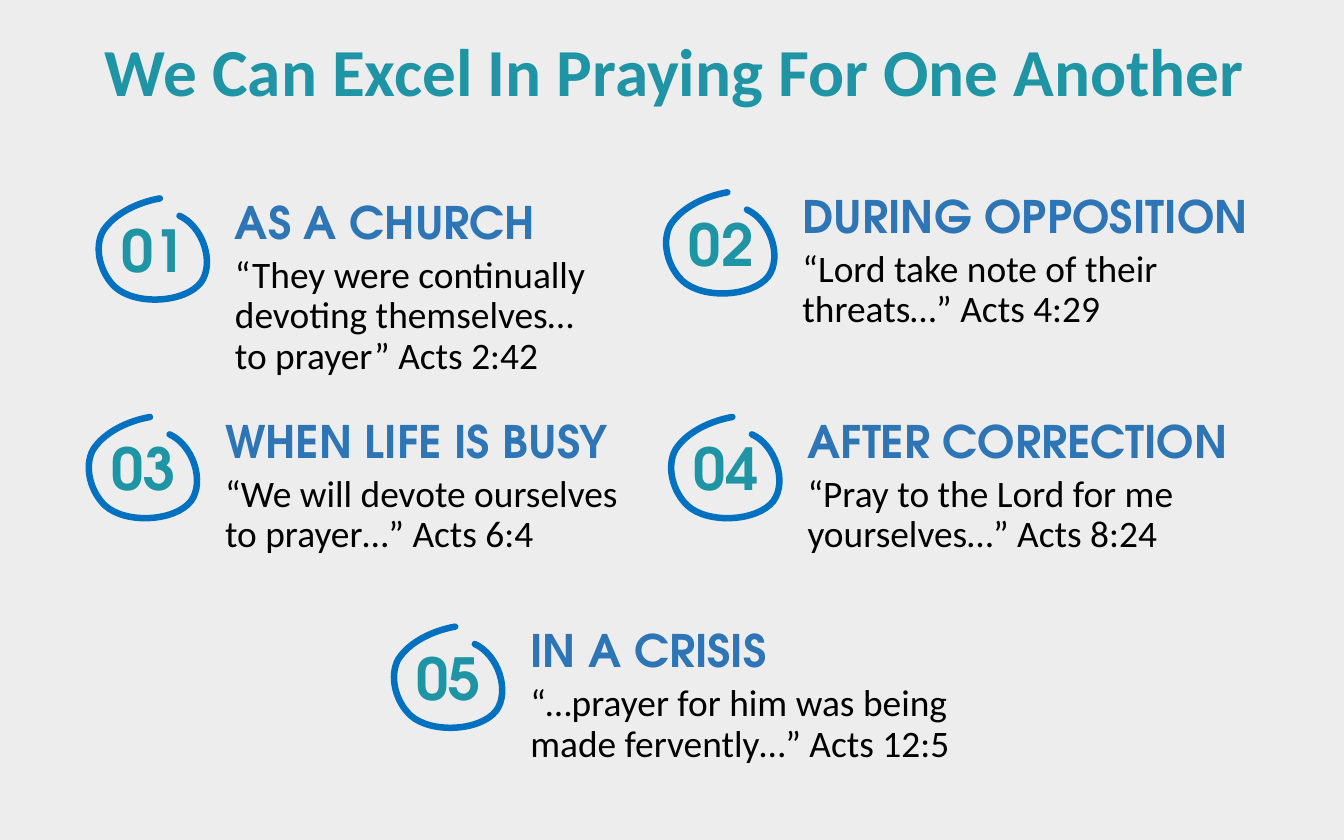
from dataclasses import dataclass

from lxml.etree import SubElement
from pptx import Presentation
from pptx.dml.color import RGBColor as RGB
from pptx.enum.text import MSO_ANCHOR as Anchor, PP_ALIGN as Align
from pptx.oxml.ns import qn
from pptx.util import Pt


@dataclass(frozen=True)
class Theme:
    background: RGB = RGB(0xED, 0xED, 0xED)
    teal: RGB = RGB(0x1E, 0x94, 0xA5)
    heading: RGB = RGB(0x2E, 0x75, 0xB6)
    ring: RGB = RGB(0x00, 0x70, 0xC0)
    body: RGB = RGB(0, 0, 0)
    text_font: str = "Calibri"
    display_font: str = "TeX Gyre Adventor"
    title_size: int = 36
    number_size: int = 31
    heading_size: int = 24
    body_size: int = 20
    ring_width: float = 3.5


THEME = Theme()

# left, top, heading width, verse width, heading, verse
REASONS = [
    (51, 106.3, 181, 202, "AS A CHURCH",
     "“They were continually devoting themselves… to prayer” Acts 2:42"),
    (355, 103, 277, 217, "DURING OPPOSITION",
     "“Lord take note of their threats…” Acts 4:29"),
    (45.7, 223.4, 235, 235, "WHEN LIFE IS BUSY",
     "“We will devote ourselves to prayer…” Acts 6:4"),
    (357.7, 223.4, 277, 217, "AFTER CORRECTION",
     "“Pray to the Lord for me yourselves…” Acts 8:24"),
    (209.2, 335.7, 277, 240, "IN A CRISIS",
     "“…prayer for him was being made fervently…” Acts 12:5"),
]

# Hand-drawn ring: its size, its start, then the three points of each cubic curve
RING_SIZE = (58, 54)
RING_START = (32.5, 0)
RING_CURVES = [
    [(21, 2), (8, 8), (2, 17.5)],
    [(-3, 26.5), (0.5, 40), (8.5, 47.5)],
    [(19.5, 57.5), (46, 56), (54.5, 45)],
    [(62, 34.5), (55.5, 15), (43, 9.3)],
]


def format_paragraph(p, font, size, color, bold=True, align=Align.LEFT, spacing=1.0):
    p.alignment, p.line_spacing = align, spacing
    p.font.name, p.font.size, p.font.bold = font, Pt(size), bold
    p.font.color.rgb = color


def add_text(shapes, text, box, inset, anchor, **style):
    tf = shapes.add_textbox(*map(Pt, box)).text_frame
    tf.word_wrap = True
    tf.vertical_anchor = anchor
    tf.margin_top = tf.margin_bottom = Pt(inset)
    tf.text = text
    format_paragraph(tf.paragraphs[0], **style)


def add_segment(outline, kind, points):
    segment = SubElement(outline, qn(kind))
    for x, y in points:
        SubElement(segment, qn("a:pt"), x=str(Pt(x)), y=str(Pt(y)))


def add_ring(shapes, left, top):
    """Span the ring's box with a freeform, then give it curved segments."""
    width, height = RING_SIZE
    builder = shapes.build_freeform(Pt(left), Pt(top))
    builder.add_line_segments([(Pt(left + width), Pt(top + height))], close=False)
    ring = builder.convert_to_shape()
    outline = next(ring._element.iter(qn("a:path")))
    for segment in list(outline):
        outline.remove(segment)
    add_segment(outline, "a:moveTo", [RING_START])
    for curve in RING_CURVES:
        add_segment(outline, "a:cubicBezTo", curve)

    ring.shadow.inherit = False
    ring.fill.background()
    ring.line.color.rgb = THEME.ring
    ring.line.width = Pt(THEME.ring_width)
    ln = next(ring._element.iter(qn("a:ln")))
    ln.set("cap", "rnd")
    SubElement(ln, qn("a:round"))


def add_reason(s, number, left, top, heading_width, verse_width, heading, verse):
    shapes = s.shapes.add_group_shape().shapes
    text_left = left + 67.8
    add_text(shapes, heading, (text_left, top - 5.5, heading_width, 36), 3.6, Anchor.TOP,
             font=THEME.display_font, size=THEME.heading_size, color=THEME.heading)
    add_text(shapes, f"{number:02}", (left, top + 15.2, 62.6, 24), 7.2, Anchor.MIDDLE,
             font=THEME.display_font, size=THEME.number_size, color=THEME.teal,
             align=Align.CENTER)
    add_ring(shapes, left + 2.2, top)
    add_text(shapes, verse, (text_left, top + 27, verse_width, 72.7), 4, Anchor.TOP,
             font=THEME.text_font, size=THEME.body_size, color=THEME.body,
             bold=False, spacing=0.9)


def add_title(s, text):
    title = s.shapes.title
    title.left, title.top, title.width, title.height = map(Pt, (28, 7.2, 667, 65.5))
    tf = title.text_frame
    tf.vertical_anchor = Anchor.MIDDLE
    tf.text = text
    format_paragraph(tf.paragraphs[0], THEME.text_font, THEME.title_size, THEME.teal,
                     align=Align.CENTER, spacing=0.9)


def main():
    prs = Presentation()
    prs.slide_width, prs.slide_height = Pt(720), Pt(450)
    s = prs.slides.add_slide(prs.slide_layouts[5])
    s.background.fill.solid()
    s.background.fill.fore_color.rgb = THEME.background
    add_title(s, "We Can Excel In Praying For One Another")
    for number, reason in enumerate(REASONS, 1):
        add_reason(s, number, *reason)
    prs.save("out.pptx")


if __name__ == "__main__":
    main()
